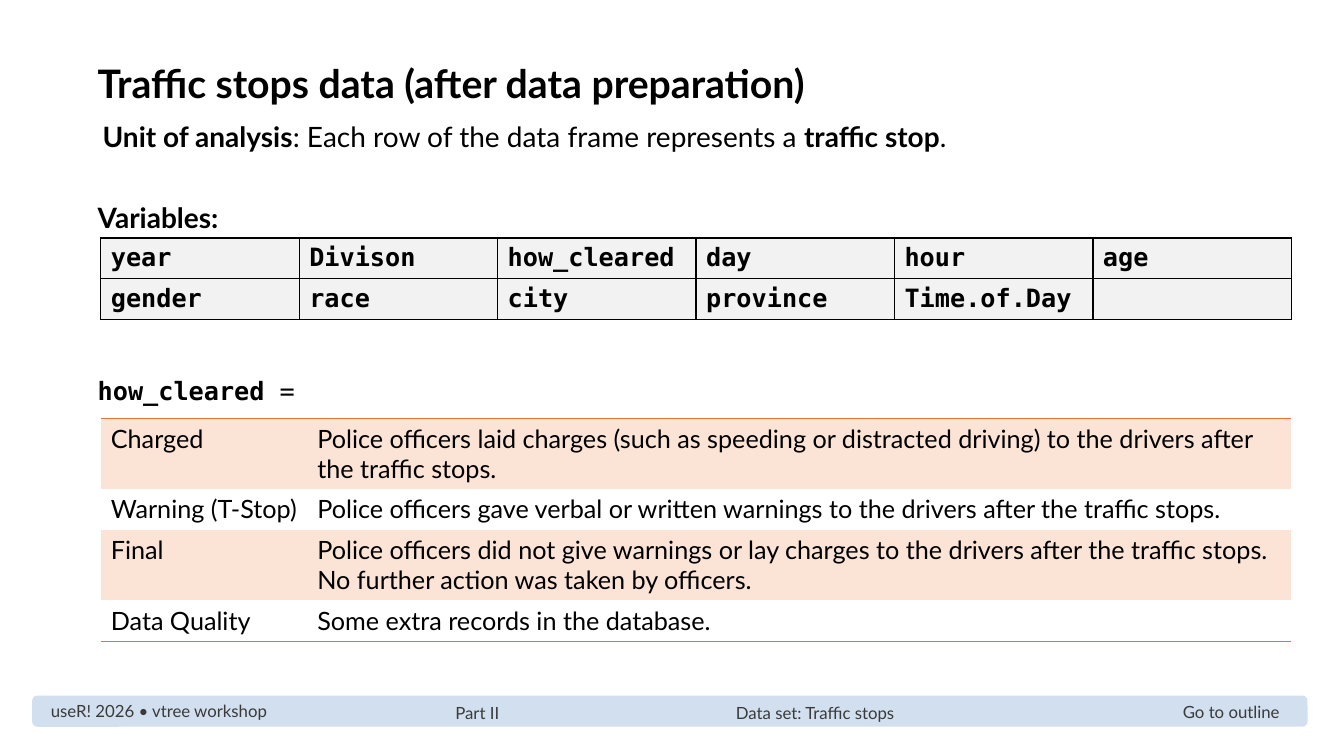
from dataclasses import dataclass

from lxml.etree import SubElement
from pptx import Presentation
from pptx.dml.color import RGBColor
from pptx.enum.shapes import MSO_SHAPE
from pptx.enum.text import MSO_ANCHOR, MSO_AUTO_SIZE, PP_ALIGN
from pptx.oxml.ns import qn
from pptx.util import Pt


@dataclass(frozen=True)
class Theme:
    sans: str = "Lato"
    mono: str = "DejaVu Sans Mono"
    ink: str = "000000"
    muted: str = "3A3A3A"
    bar: str = "D2DFEE"
    grid: str = "F2F2F2"
    band: str = "FBE3D6"
    accent: str = "E97132"
    title: int = 28
    lead: int = 20
    text: int = 18
    foot: int = 12


PLAIN = "{2D5ABB26-0587-4C30-8999-92F81FD0307C}"
SIDES = ("lnL", "lnR", "lnT", "lnB")

VARS = [
    ["year", "Divison", "how_cleared", "day", "hour", "age"],
    ["gender", "race", "city", "province", "Time.of.Day", ""],
]
CODES = [
    ["Charged", "Police officers laid charges (such as speeding or distracted "
                "driving) to the drivers after the traffic stops."],
    ["Warning (T-Stop)", "Police officers gave verbal or written warnings to "
                         "the drivers after the traffic stops."],
    ["Final", "Police officers did not give warnings or lay charges to the "
              "drivers after the traffic stops.  No further action was taken "
              "by officers."],
    ["Data Quality", "Some extra records in the database."],
]


class Page:
    def __init__(self, slide, theme):
        self.slide, self.theme = slide, theme

    def add_text(self, para, text, **form):
        run = para.add_run()
        run.text = text
        color = form.pop("color", self.theme.ink)
        base = {"name": self.theme.sans, "size": self.theme.text, "bold": False}
        for key, value in (base | form).items():
            setattr(run.font, key, Pt(value) if key == "size" else value)
        run.font.color.rgb = RGBColor.from_string(color)

    def place(self, shape, box):
        for key, value in zip(("left", "top", "width", "height"), box):
            setattr(shape, key, Pt(value))

    def frame(self, shape, anchor=MSO_ANCHOR.TOP):
        form = {"word_wrap": True, "auto_size": MSO_AUTO_SIZE.NONE,
                "vertical_anchor": anchor}
        for key, value in form.items():
            setattr(shape.text_frame, key, value)
        return shape.text_frame

    def title(self, text, box):
        shape = self.slide.shapes.title
        self.place(shape, box)
        para = self.frame(shape).paragraphs[0]
        para.alignment = PP_ALIGN.LEFT
        self.add_text(para, text, size=self.theme.title, bold=True)

    def body(self, items, box):
        """Fill the body with (indent, space before, runs) items."""
        shape = self.slide.placeholders[1]
        self.place(shape, box)
        frame = self.frame(shape)
        for i, (indent, space, runs) in enumerate(items):
            para = frame.add_paragraph() if i else frame.paragraphs[0]
            props = para._p.get_or_add_pPr()
            props.set("marL", str(Pt(indent)))
            props.set("indent", "0")
            SubElement(props, qn("a:buNone"))
            para.space_before = Pt(space)
            for text, form in runs:
                self.add_text(para, text, **form)

    def bar(self, box):
        shape = self.slide.shapes.add_shape(
            MSO_SHAPE.ROUNDED_RECTANGLE, *map(Pt, box))
        shape.shadow.inherit = False
        shape.fill.solid()
        shape.fill.fore_color.rgb = RGBColor.from_string(self.theme.bar)
        shape.line.fill.background()

    def label(self, text, box, align=PP_ALIGN.LEFT):
        shape = self.slide.shapes.add_textbox(*map(Pt, box))
        para = self.frame(shape, MSO_ANCHOR.MIDDLE).paragraphs[0]
        para.alignment = align
        self.add_text(para, text, size=self.theme.foot, color=self.theme.muted)

    def border(self, cell, sides, color):
        props = cell._tc.get_or_add_tcPr()
        for i, side in enumerate(sides):
            line = SubElement(props, qn(f"a:{side}"), w=str(Pt(1)))
            fill = SubElement(line, qn("a:solidFill"))
            SubElement(fill, qn("a:srgbClr"), val=color)
            props.insert(i, line)

    def table(self, rows, spot, cols, heights, look, **form):
        """Draw rows; look(row) gives the fill, border sides and line colour."""
        box = (*spot, sum(cols), sum(heights))
        table = self.slide.shapes.add_table(
            len(rows), len(cols), *map(Pt, box)).table
        table.first_row = table.horz_banding = False
        table._tbl.tblPr.find(qn("a:tableStyleId")).text = PLAIN
        for col, width in zip(table.columns, cols):
            col.width = Pt(width)
        for r, (row, height) in enumerate(zip(rows, heights)):
            table.rows[r].height = Pt(height)
            fill, sides, color = look(r)
            for c, text in enumerate(row):
                cell = table.cell(r, c)
                if fill:
                    cell.fill.solid()
                    cell.fill.fore_color.rgb = RGBColor.from_string(fill)
                else:
                    cell.fill.background()
                self.border(cell, sides, color)
                if text:
                    self.add_text(cell.text_frame.paragraphs[0], text, **form)


def main():
    deck = Presentation()
    deck.slide_width, deck.slide_height = Pt(960), Pt(540)
    theme = Theme()
    page = Page(deck.slides.add_slide(deck.slide_layouts[1]), theme)

    lead = {"size": theme.lead}
    strong = lead | {"bold": True}
    code = {"name": theme.mono, "bold": True}
    page.title("Traffic stops data (after data preparation)",
               (62.6, 38.9, 860, 42))
    page.body([
        (3.5, 0, [("Unit of analysis", strong),
                  (": Each row of the data frame represents a ", lead),
                  ("traffic stop", strong), (".", lead)]),
        (0, 34, [("Variables:", strong)]),
        (0, 100.5, [("how_cleared", code), (" =", {"name": theme.mono})]),
    ], (62.6, 81.7, 860, 215))

    page.table(VARS, (72, 170), [141.75] * 6, [29.2] * 2,
               lambda row: (theme.grid, SIDES, theme.ink), **code)

    edges = {0: ["lnT"], len(CODES) - 1: ["lnB"]}
    page.table(CODES, (72, 298.8), [147.5, 703], [50.4, 29.2] * 2,
               lambda row: (None if row % 2 else theme.band,
                            edges.get(row, []), theme.accent))

    page.bar((23, 496.8, 911, 22.3))
    page.label("useR! 2026 • vtree workshop", (29.2, 493.2, 190, 28.8))
    page.label("Part II", (318.2, 494.6, 180, 28.8))
    page.label("Data set: Traffic stops", (518.6, 494.6, 210, 28.8))
    page.label("Go to outline", (831, 494, 97, 28.8), PP_ALIGN.CENTER)
    deck.save("out.pptx")


if __name__ == "__main__":
    main()
